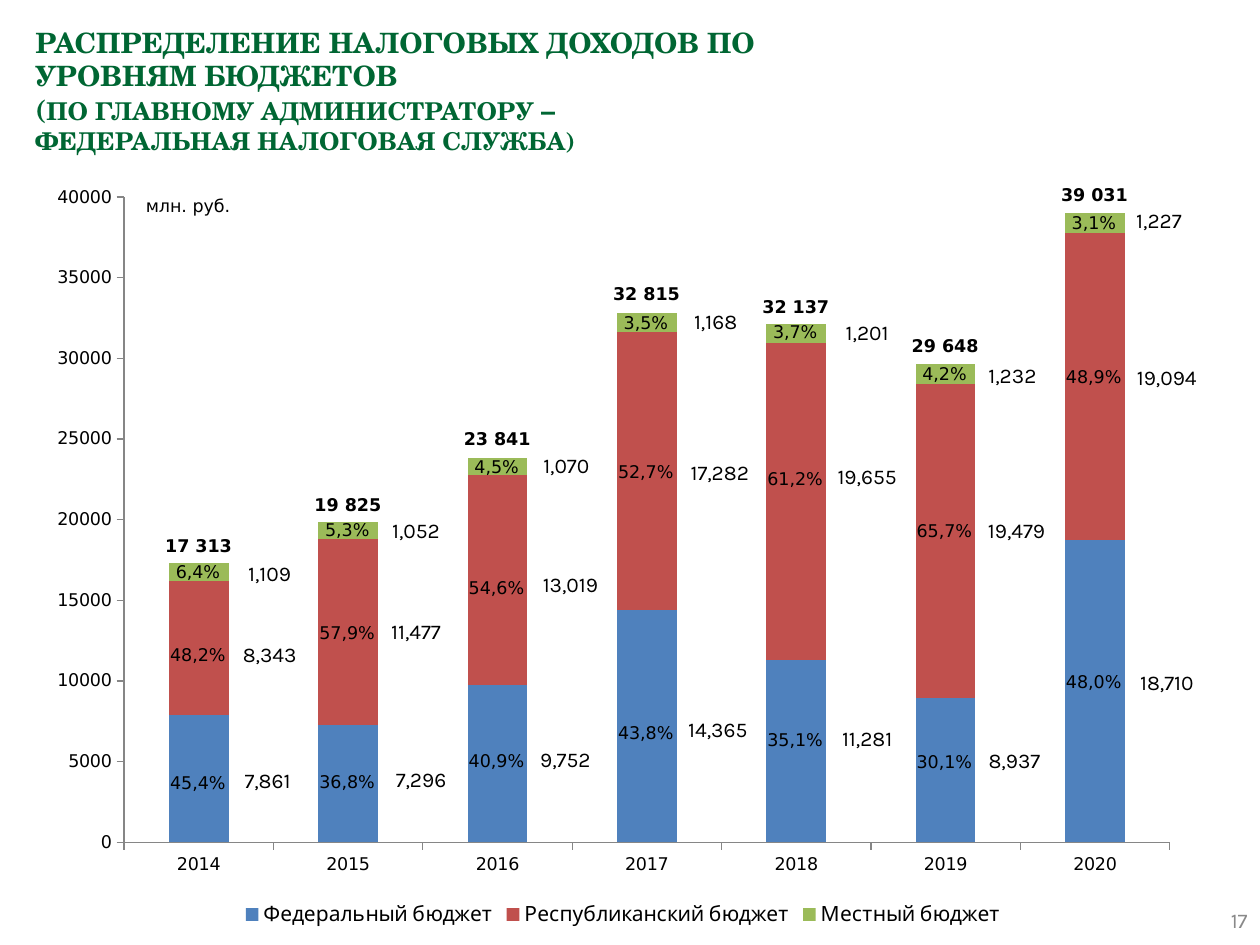
from dataclasses import dataclass

from lxml import etree
from pptx import Presentation
from pptx.chart.data import CategoryChartData
from pptx.dml.color import RGBColor
from pptx.enum import chart as ch, text as tx
from pptx.oxml.ns import qn
from pptx.util import Cm, Pt

COLORS = {"title": "006633", "text": "000000", "number": "898989", "axis": "868686",
          "federal": "4F81BD", "republic": "C0504D", "local": "9BBB59"}
HEADING, BODY, LABEL = "TeX Gyre Schola", "DejaVu Sans", "Karla"
YEARS = [str(year) for year in range(2014, 2021)]
CHART_W, CHART_H = 23.5, 15.21
FIRST_BAR, BAR_STEP = 4.03, 3.01  # centres of the caption columns, cm
C15 = "http://schemas.microsoft.com/office/drawing/2012/chart"


@dataclass
class Budget:
    """One budget level; label shifts and share tops are in cm."""
    name: str
    color: str
    values: list[int]
    shift_x: list[float]
    shift_y: list[float]
    shares: list[str]
    share_tops: list[float]
    share_width: float


BUDGETS = [
    Budget("Федеральный бюджет", "federal",
           [7861, 7296, 9752, 14365, 11281, 8937, 18710],
           [1.39, 1.47, 1.37, 1.43, 1.43, 1.39, 1.45],
           [0.06, -0.06, -0.06, 0.08, -0.24, -0.18, -0.16],
           ["45,4%", "36,8%", "40,9%", "43,8%", "35,1%", "30,1%", "48,0%"],
           [15.44, 15.42, 14.99, 14.43, 14.58, 15.01, 13.41], 1.7),
    Budget("Республиканский бюджет", "republic",
           [8343, 11477, 13019, 17282, 19655, 19479, 19094],
           [1.43, 1.37, 1.47, 1.47, 1.43, 1.43, 1.45],
           [0.14, 0, 0.1, 0.04, -0.5, -0.2, -0.16],
           ["48,2%", "57,9%", "54,6%", "52,7%", "61,2%", "65,7%", "48,9%"],
           [12.85, 12.42, 11.51, 9.17, 9.3, 10.36, 7.26], 1.7),
    Budget("Местный бюджет", "local",
           [1109, 1052, 1070, 1168, 1201, 1232, 1227],
           [1.43, 1.37, 1.39, 1.39, 1.43, 1.35, 1.29],
           [0.04, 0, 0, 0, 0, 0.04, -0.02],
           ["6,4%", "5,3%", "4,5%", "3,5%", "3,7%", "4,2%", "3,1%"],
           [11.18, 10.34, 9.07, 6.17, 6.35, 7.19, 4.14], 1.47),
]
TOTALS = ["17 313", "19 825", "23 841", "32 815", "32 137", "29 648", "39 031"]
TOTAL_TOPS = [10.67, 9.83, 8.51, 5.59, 5.84, 6.63, 3.58]


def rgb(name: str) -> RGBColor:
    return RGBColor.from_string(COLORS[name])


def style(font, size: float, face: str, color: str = "text", bold: bool = False) -> None:
    font.size, font.name, font.bold = Pt(size), face, bold
    font.color.rgb = rgb(color)


def add_caption(slide, words: str, left: float, top: float, width: float,
                bold: bool = False, wrap: bool = False) -> None:
    frame = slide.shapes.add_textbox(Cm(left), Cm(top), Cm(width), Cm(0.68)).text_frame
    frame.word_wrap = wrap
    frame.text = words
    style(frame.paragraphs[0].runs[0].font, 10, BODY, bold=bold)


def add_caption_row(slide, words: list[str], tops: list[float], width: float,
                    bold: bool = False) -> None:
    for i, (word, top) in enumerate(zip(words, tops)):
        add_caption(slide, word, FIRST_BAR + BAR_STEP * i - width / 2, top, width, bold)


def add_layout(parent, index: int, **settings) -> None:
    """Give a chart part a manual layout in fractions of the chart."""
    for old in parent.findall(qn("c:layout")):
        parent.remove(old)
    layout = etree.Element(qn("c:layout"))
    manual = etree.SubElement(layout, qn("c:manualLayout"))
    for key, value in settings.items():
        etree.SubElement(manual, qn(f"c:{key}")).set("val", str(value))
    parent.insert(index, layout)


def hide_leader_lines(labels) -> None:
    """Switch off the lines from moved labels back to their bars."""
    for old in labels.findall(qn("c:showLeaderLines")):
        labels.remove(old)
    etree.SubElement(labels, qn("c:showLeaderLines")).set("val", "0")
    extension = etree.SubElement(etree.SubElement(labels, qn("c:extLst")), qn("c:ext"),
                                 nsmap={"c15": C15})
    extension.set("uri", "{CE6537A1-D6FC-4f65-9D91-7224C49458BB}")
    etree.SubElement(extension, f"{{{C15}}}showLeaderLines").set("val", "0")


def label_values(series, budget: Budget) -> None:
    labels = series.data_labels
    labels.show_value = True
    labels.number_format, labels.number_format_is_linked = "#,##0", False
    style(labels.font, 12, LABEL)
    for i, (dx, dy) in enumerate(zip(budget.shift_x, budget.shift_y)):
        point_label = etree.Element(qn("c:dLbl"))
        etree.SubElement(point_label, qn("c:idx")).set("val", str(i))
        add_layout(point_label, 1, x=round(dx / CHART_W, 4), y=round(dy / CHART_H, 4))
        for part in ("LegendKey", "Val", "CatName", "SerName", "Percent", "BubbleSize"):
            shown = "1" if part == "Val" else "0"
            etree.SubElement(point_label, qn(f"c:show{part}")).set("val", shown)
        labels._element.insert(i, point_label)
    hide_leader_lines(labels._element)


def add_budget_chart(slide) -> None:
    data = CategoryChartData()
    data.categories = YEARS
    for budget in BUDGETS:
        data.add_series(budget.name, budget.values)
    chart = slide.shapes.add_chart(ch.XL_CHART_TYPE.COLUMN_STACKED, Cm(0.81), Cm(3.58),
                                   Cm(CHART_W), Cm(CHART_H), data).chart
    style(chart.font, 18, LABEL)
    chart.has_title = False
    add_layout(chart._chartSpace.chart.plotArea, 0, layoutTarget="inner", xMode="edge",
               yMode="edge", x=0.072, y=0.026, w=0.897, h=0.855)

    # Bars and their value labels
    plot = chart.plots[0]
    plot.gap_width, plot.overlap, plot.vary_by_categories = 150, 100, False
    for series, budget in zip(plot.series, BUDGETS):
        series.format.fill.solid()
        series.format.fill.fore_color.rgb = rgb(budget.color)
        label_values(series, budget)

    # Axes and legend
    for axis in (chart.category_axis, chart.value_axis):
        axis.has_major_gridlines = False
        axis.major_tick_mark = ch.XL_TICK_MARK.OUTSIDE
        axis.format.line.color.rgb = rgb("axis")
        axis.format.line.width = Pt(0.75)
        style(axis.tick_labels.font, 10, BODY)
    chart.value_axis.minimum_scale = 0
    chart.value_axis.maximum_scale = 40000
    chart.value_axis.major_unit = 5000
    chart.has_legend = True
    chart.legend.position = ch.XL_LEGEND_POSITION.BOTTOM
    chart.legend.include_in_layout = False
    style(chart.legend.font, 12, LABEL)


def set_title(slide) -> None:
    title = slide.shapes.title
    title.left, title.top, title.width, title.height = Cm(0.46), Cm(0.36), Cm(15.29), Cm(2.92)
    frame = title.text_frame
    frame.word_wrap = True
    frame.auto_size = tx.MSO_AUTO_SIZE.NONE
    frame.vertical_anchor = tx.MSO_ANCHOR.MIDDLE
    line = frame.paragraphs[0]
    line.alignment = tx.PP_ALIGN.LEFT
    pieces = [("РАСПРЕДЕЛЕНИЕ НАЛОГОВЫХ ДОХОДОВ ПО УРОВНЯМ БЮДЖЕТОВ", 16), ("(", 16),
              ("ПО ГЛАВНОМУ АДМИНИСТРАТОРУ ", 14), ("– ", 16),
              ("ФЕДЕРАЛЬНАЯ НАЛОГОВАЯ СЛУЖБА)", 14)]
    for words, size in pieces:
        if words == "(":
            line.add_line_break()
        run = line.add_run()
        run.text = words
        style(run.font, size, HEADING, "title", bold=True)


def add_page_number(slide) -> None:
    frame = slide.shapes.add_textbox(Cm(19.48), Cm(18.03), Cm(5.92), Cm(1.02)).text_frame
    frame.word_wrap = True
    frame.vertical_anchor = tx.MSO_ANCHOR.MIDDLE
    frame.text = "17"
    frame.paragraphs[0].alignment = tx.PP_ALIGN.RIGHT
    style(frame.paragraphs[0].runs[0].font, 12, LABEL, "number")


def main() -> None:
    deck = Presentation()
    deck.slide_width, deck.slide_height = Cm(25.4), Cm(19.05)
    slide = deck.slides.add_slide(deck.slide_layouts[5])
    set_title(slide)
    add_page_number(slide)
    add_budget_chart(slide)

    # Unit, shares inside the bars, totals above them
    add_caption(slide, "млн. руб.", 2.69, 3.81, 3, wrap=True)
    for budget in BUDGETS:
        add_caption_row(slide, budget.shares, budget.share_tops, budget.share_width)
    add_caption_row(slide, TOTALS, TOTAL_TOPS, 1.9, bold=True)
    deck.save("out.pptx")


if __name__ == "__main__":
    main()
